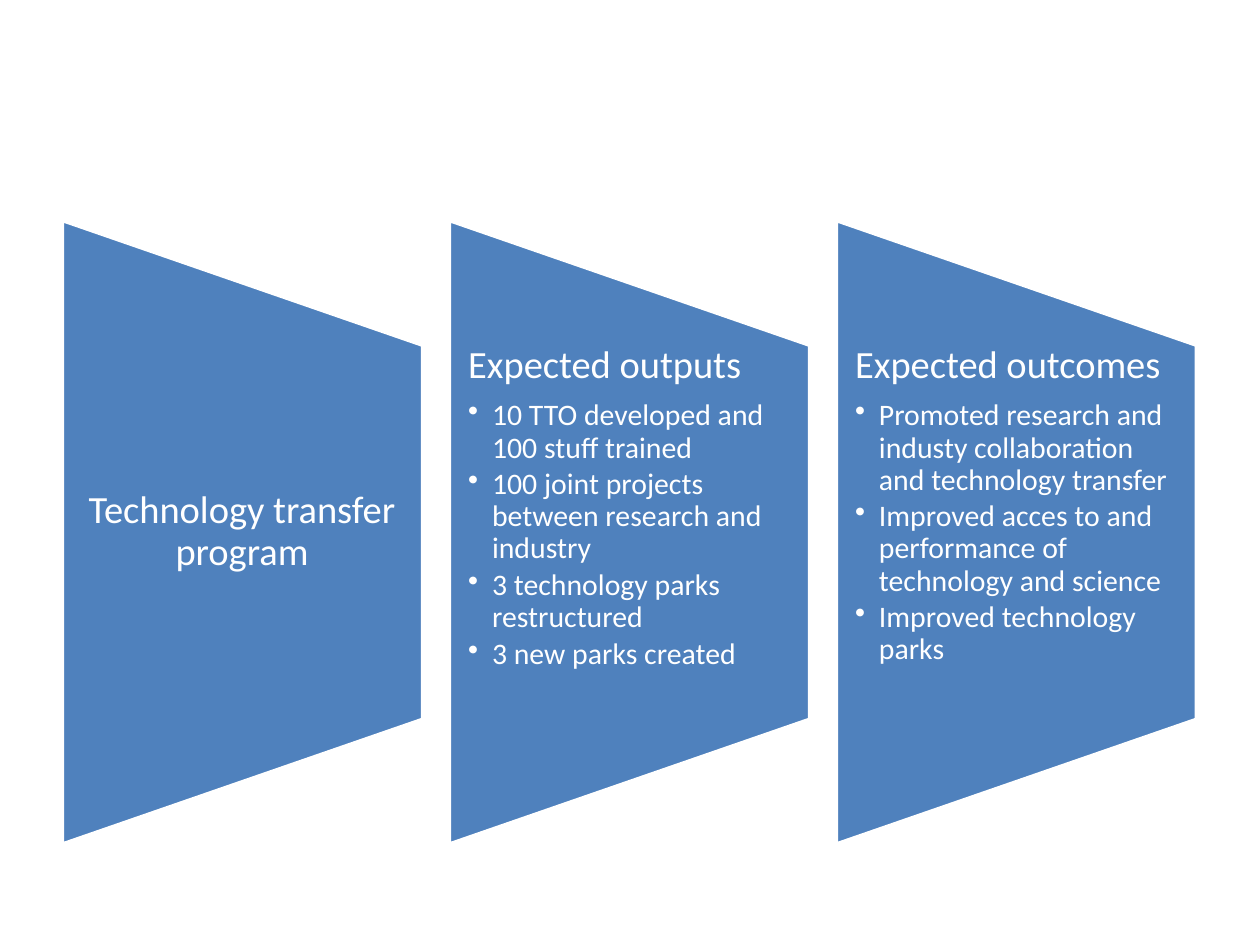
from dataclasses import dataclass

from lxml import etree
from pptx import Presentation
from pptx.dml.color import RGBColor
from pptx.enum.shapes import MSO_SHAPE
from pptx.enum.text import MSO_ANCHOR, PP_ALIGN
from pptx.oxml.ns import qn
from pptx.util import Cm, Pt

TRAPEZOID = MSO_SHAPE.FLOWCHART_MANUAL_OPERATION
TOP, MIDDLE = MSO_ANCHOR.TOP, MSO_ANCHOR.MIDDLE
LEFT, CENTER = PP_ALIGN.LEFT, PP_ALIGN.CENTER

BLUE = RGBColor(0x4F, 0x81, 0xBD)
WHITE = RGBColor(0xFF, 0xFF, 0xFF)
FONT = "Calibri"

# All lengths in centimetres
FIRST_LEFT, PITCH = 1.26, 7.8
PANEL_W, PANEL_H = 7.26, 12.57
CENTER_Y = 10.73
TEXT_H = 7.54
BULLET_INDENT = 0.48


@dataclass
class Panel:
    heading: str
    bullets: tuple[str, ...] = ()


PANELS = [
    Panel("Technology transfer program"),
    Panel("Expected outputs", (
        "10 TTO developed and 100 stuff trained",
        "100 joint projects between research and industry",
        "3 technology parks restructured",
        "3 new parks created",
    )),
    Panel("Expected outcomes", (
        "Promoted research and industy collaboration and technology transfer",
        "Improved acces to and performance of technology and science",
        "Improved technology parks",
    )),
]


def write(p, text: str, *, size: float, after: float,
          align=LEFT, bullet: bool = False) -> None:
    """Fill a paragraph; `after` is a share of the font size."""
    p.alignment = align
    p.line_spacing = 0.9
    p.space_after = Pt(size * after)
    r = p.add_run()
    r.text = text
    r.font.name = FONT
    r.font.size = Pt(size)
    r.font.color.rgb = WHITE
    if bullet:
        p.level = 1
        props = p._p.get_or_add_pPr()
        props.set("marL", str(Cm(BULLET_INDENT)))
        props.set("indent", str(-Cm(BULLET_INDENT)))
        etree.SubElement(props, qn("a:buChar"), char="•")


def draw_trapezoid(slide, left: float) -> None:
    """Draw a panel lying on its side, with its wide edge at `left`."""
    sp = slide.shapes.add_shape(
        TRAPEZOID,
        Cm(left + (PANEL_W - PANEL_H) / 2), Cm(CENTER_Y - PANEL_W / 2),
        Cm(PANEL_H), Cm(PANEL_W))
    sp.rotation = 270
    sp.shadow.inherit = False
    sp.fill.solid()
    sp.fill.fore_color.rgb = BLUE
    sp.line.color.rgb = WHITE
    sp.line.width = Pt(2)


def draw_text(slide, panel: Panel, left: float) -> None:
    box = slide.shapes.add_textbox(
        Cm(left), Cm(CENTER_Y - TEXT_H / 2), Cm(PANEL_W), Cm(TEXT_H))
    tf = box.text_frame
    tf.word_wrap = True
    tf.margin_left, tf.margin_right = Cm(0.38), Cm(0.4)
    tf.margin_top = tf.margin_bottom = 0
    tf.vertical_anchor = TOP if panel.bullets else MIDDLE
    write(tf.paragraphs[0], panel.heading, size=22, after=0.35,
          align=LEFT if panel.bullets else CENTER)
    for bullet in panel.bullets:
        write(tf.add_paragraph(), bullet, size=17, after=0.15, bullet=True)


def main() -> None:
    prs = Presentation()
    prs.slide_width, prs.slide_height = Cm(25.4), Cm(19.05)
    slide = prs.slides.add_slide(prs.slide_layouts[6])
    for i, panel in enumerate(PANELS):
        left = FIRST_LEFT + i * PITCH
        draw_trapezoid(slide, left)
        draw_text(slide, panel, left)
    prs.save("out.pptx")


if __name__ == "__main__":
    main()
